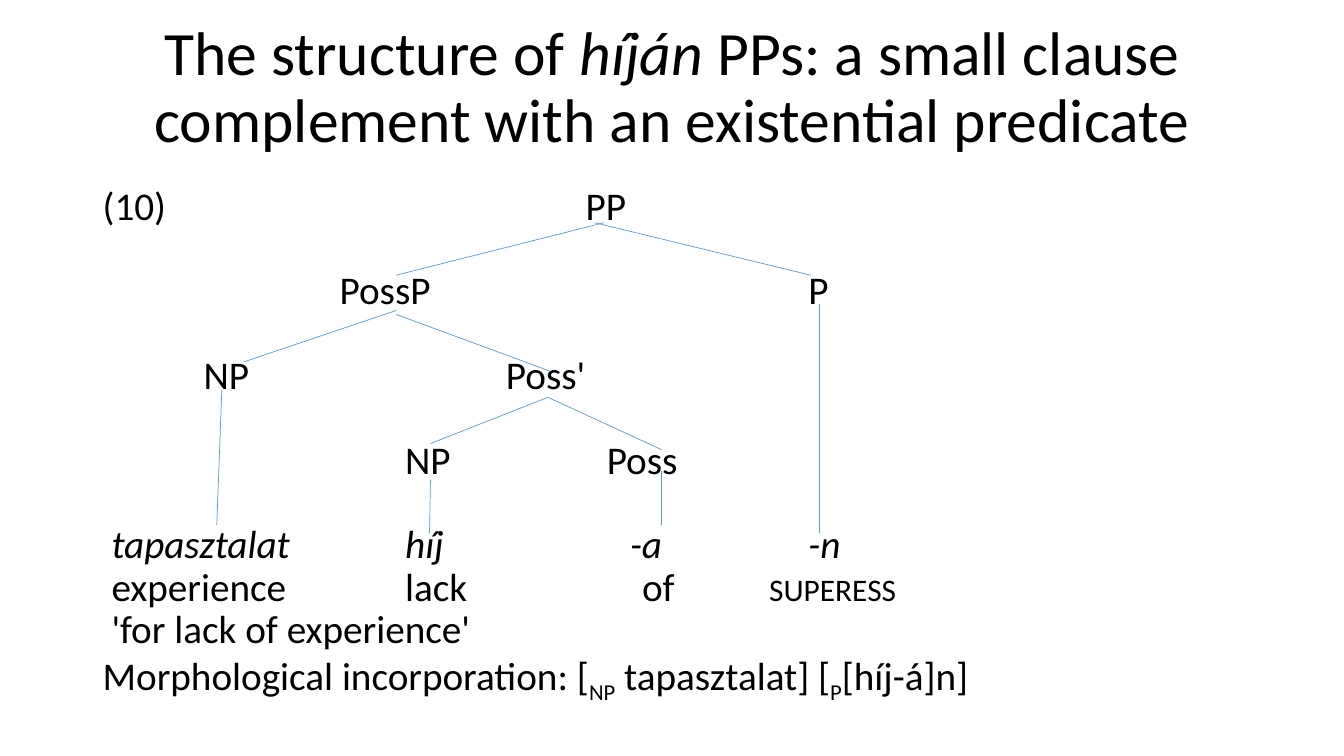
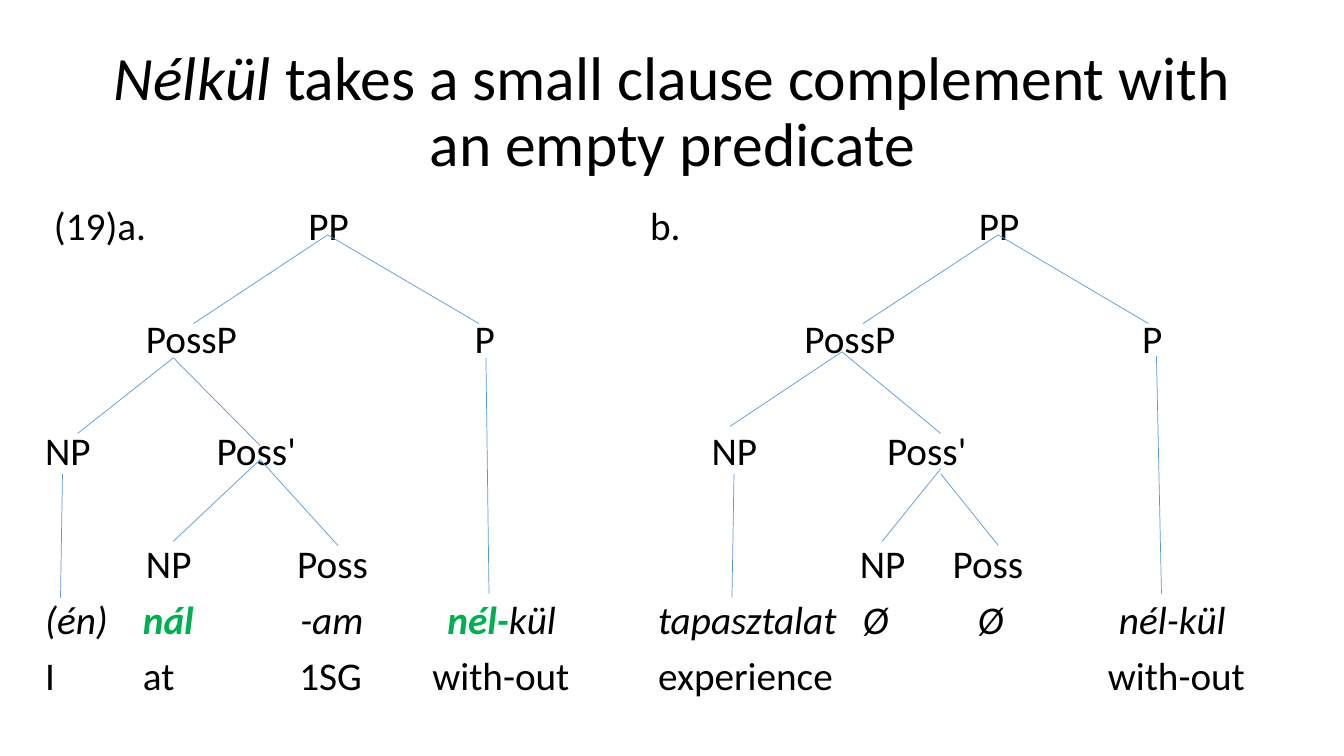
from itertools import groupby
from lxml.etree import SubElement
from pptx import Presentation
from pptx.dml.color import RGBColor
from pptx.enum.shapes import MSO_CONNECTOR
from pptx.enum.text import MSO_ANCHOR, PP_ALIGN
from pptx.oxml.ns import qn
from pptx.util import Inches, Pt

FACE = "Calibri"
INK = "000000"
BLUE = "5B9BD5"
GREEN = "00B050"
BODY = 28
HEAD = 44
PITCH = 30.2


def paint(target, color):
    target.rgb = RGBColor.from_string(color)


def write(para, runs, size):
    para.line_spacing = 0.9
    para.font.name = FACE
    para.font.size = Pt(size)
    paint(para.font.color, INK)
    for text, style in runs:
        run = para.add_run()
        run.text = text
        if "i" in style:
            run.font.italic = True
        if "g" in style:
            run.font.bold = True
            paint(run.font.color, GREEN)
        if "s" in style:
            run.font._element.set("cap", "small")
        if "d" in style:
            run.font._element.set("baseline", "-25000")


def add_title(slide, top, runs):
    title = slide.shapes.title
    title.left, title.top = Inches(0.92), Inches(top)
    title.width, title.height = Inches(11.5), Inches(1.45)
    frame = title.text_frame
    frame.word_wrap = True
    frame.vertical_anchor = MSO_ANCHOR.MIDDLE
    para = frame.paragraphs[0]
    para.alignment = PP_ALIGN.CENTER
    write(para, runs, HEAD)


def add_row(para, cells):
    stops = [x for x, text, style in cells if x]
    if stops:
        tabs = SubElement(para._p.get_or_add_pPr(), qn("a:tabLst"))
        for x in stops:
            SubElement(tabs, qn("a:tab"), pos=str(Inches(x)), algn="l")
    parts = [("\t" + text if x else text, style) for x, text, style in cells]
    runs = [("".join(text for text, mark in group), style)
            for style, group in groupby(parts, key=lambda part: part[1])]
    write(para, runs, BODY)


def add_body(slide, box, inset, gap, rows):
    left, top, width, height = (Inches(side) for side in box)
    frame = slide.shapes.add_textbox(left, top, width, height).text_frame
    frame.word_wrap = True
    frame.margin_top = Inches(inset)
    for index, (skip, *cells) in enumerate(rows):
        para = frame.add_paragraph() if index else frame.paragraphs[0]
        para.space_before = Pt(gap + skip * (PITCH + gap))
        add_row(para, cells)


def add_branch(slide, left, top, ends):
    x1, y1, x2, y2 = ends
    line = slide.shapes.add_connector(
        MSO_CONNECTOR.STRAIGHT, Inches(left + x1), Inches(top + y1),
        Inches(left + x2), Inches(top + y2))
    paint(line.line.color, BLUE)
    line.line.width = Pt(0.5)
    SubElement(line._element.spPr, qn("a:effectLst"))


def add_tree(slide, left, top, branches):
    for ends in branches:
        add_branch(slide, left, top, ends)


def add_slide(deck, top, runs):
    slide = deck.slides.add_slide(deck.slide_layouts[5])
    add_title(slide, top, runs)
    return slide


def build_hijan(deck):
    slide = add_slide(deck, 0.16, [
        ("The structure of ", ""), ("híján", "i"),
        (" PPs: a small clause complement with an existential predicate", "")])
    rows = [
        (0, (0, "(10)", ""), (4.79, "PP", "")),
        (1, (2.35, "PossP", ""), (7, "P", "")),
        (1, (1, "NP", ""), (4, "Poss'", "")),
        (1, (3, "NP", ""), (5, "Poss", "")),
        (1, (0, " ", ""), (0, "tapasztalat", "i"), (3, "híj", "i"),
         (5.23, "-a", "i"), (7, "-n", "i")),
        (0, (0, " experience", ""), (3, "lack", ""), (5.35, "of", ""),
         (6.61, "superess", "s")),
        (0, (0, " 'for lack of experience'", "")),
        (0, (0, "Morphological incorporation: [", ""), (0, "NP", "d"),
         (0, " tapasztalat] [", ""), (0, "P", "d"), (0, "[híj-á]n]", "")),
    ]
    branches = [
        (4.99, 0.34, 2.93, 0.86), (4.9, 0.34, 7.04, 0.86),
        (2.93, 1.21, 1.42, 1.72), (2.93, 1.25, 4.45, 1.81),
        (4.44, 2.07, 3.27, 2.53), (4.43, 2.07, 5.56, 2.59),
        (1.2, 2, 1.15, 3.34), (3.27, 2.89, 3.26, 3.42),
        (5.56, 2.8, 5.56, 3.34), (7.13, 1.15, 7.13, 3.42),
    ]
    add_body(slide, (0.92, 1.38, 12.11, 4.69), 0.47, 0, rows)
    add_tree(slide, 1, 1.87, branches)


def build_nelkul(deck):
    slide = add_slide(deck, 0.4, [
        ("Nélkül", "i"),
        (" takes a small clause complement with an empty predicate", "")])
    rows = [
        (0, (0, " (19)a.", ""), (2.61, "PP", ""), (6, "b.", ""),
         (9.26, "PP", "")),
        (1, (1, "PossP", ""), (4.26, "P", ""), (7.53, "PossP", ""),
         (10.88, "P", "")),
        (1, (0, "NP", ""), (1.7, "Poss'", ""), (6.61, "NP", ""),
         (8.35, "Poss'", "")),
        (1, (1, "NP", ""), (2.5, "Poss", ""), (8.08, "NP", ""),
         (9, "Poss", "")),
        (0, (0, "(én)", "i"), (0.97, "nál", "ig"), (2.53, "-am", "i"),
         (3.99, "nél-", "ig"), (0, "kül", "i"), (6.08, "tapasztalat", "i"),
         (8.11, "Ø", "i"), (9.25, "Ø", "i"), (10.65, "nél-kül", "i")),
        (0, (0, "I", ""), (0.97, "at", ""), (2.52, "1SG", ""),
         (3.84, "with-out", ""), (6.08, "experience", ""),
         (10.54, "with-out", "")),
    ]
    first = [
        (2.85, 0.33, 1.52, 1.21), (2.85, 0.33, 4.35, 1.21),
        (1.32, 1.55, 0.37, 2.3), (1.32, 1.55, 2.18, 2.42),
        (2.18, 2.56, 1.32, 3.37), (2.18, 2.56, 2.95, 3.41),
        (0.22, 2.7, 0.2, 3.93), (4.42, 1.55, 4.45, 3.89),
    ]
    second = [
        (3.5, 0.33, 2.16, 1.21), (3.5, 0.33, 4.99, 1.21),
        (1.95, 1.49, 0.84, 2.23), (1.95, 1.49, 2.93, 2.3),
        (2.93, 2.65, 2.35, 3.37), (2.93, 2.7, 3.5, 3.41),
        (0.88, 2.7, 0.86, 3.93), (5.07, 1.53, 5.12, 3.89),
    ]
    add_body(slide, (0.35, 2, 12.2, 5.13), 0.05, 10, rows)
    for left, branches in ((0.4, first), (6.4, second)):
        add_tree(slide, left, 2, branches)


def main():
    deck = Presentation()
    deck.slide_width, deck.slide_height = Inches(13.33), Inches(7.5)
    build_hijan(deck)
    build_nelkul(deck)
    deck.save("out.pptx")


if __name__ == "__main__":
    main()
